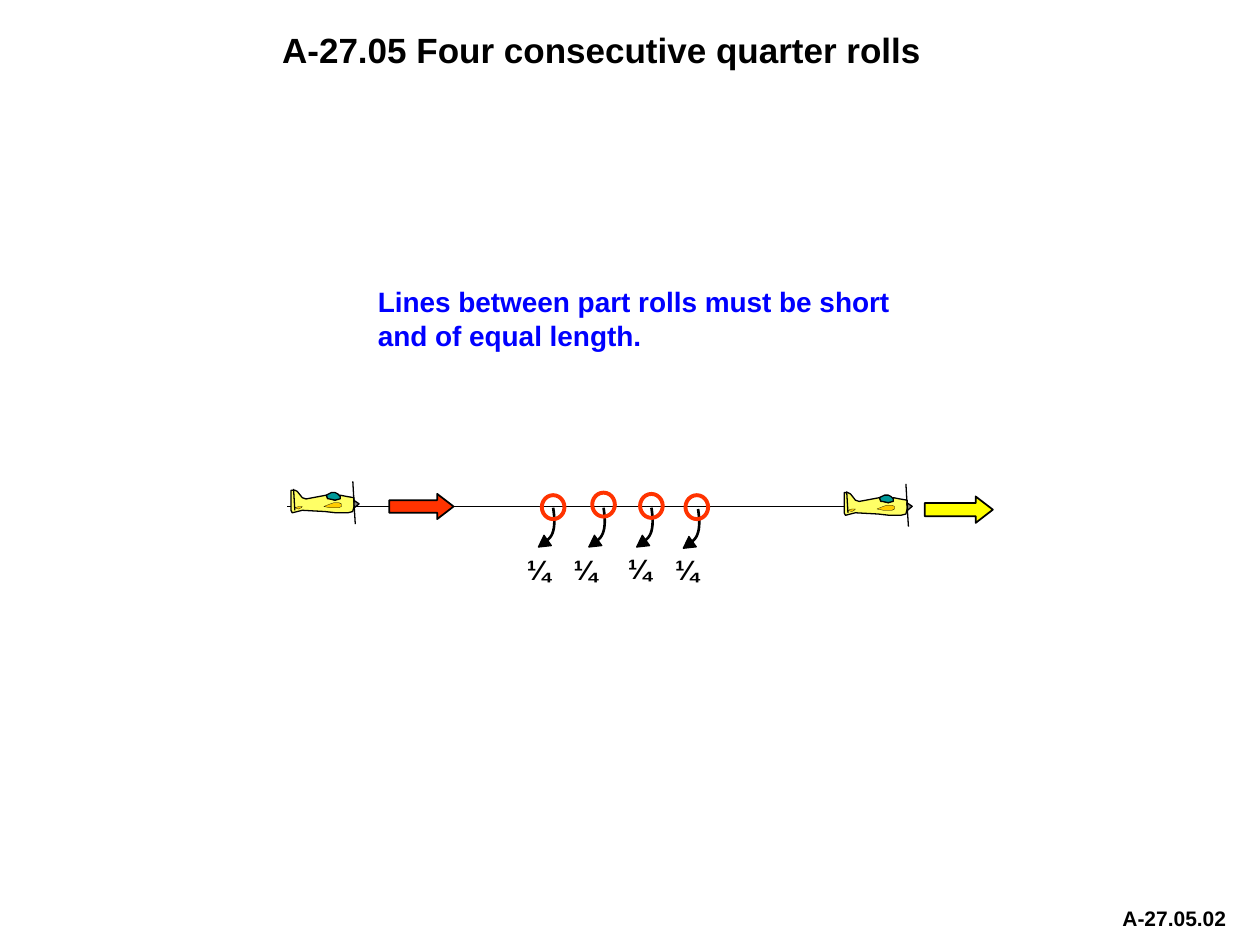
"""Build the slide for figure A-27.05, four consecutive quarter rolls."""
import pptx
import pptx.dml.color
import pptx.enum.shapes
import pptx.enum.text
import pptx.oxml.ns
import pptx.util
from lxml import etree

Inches = pptx.util.Inches
Shape = pptx.enum.shapes.MSO_SHAPE
Align = pptx.enum.text.PP_ALIGN
COLOURS = {
    "black": "000000", "blue": "0000FF", "red": "FF3300", "yellow": "FFFF00",
    "body": "FFFF66", "canopy": "009999", "marking": "FFCC00", "nose": "808080",
}

presentation = pptx.Presentation()
presentation.slide_width = Inches(10)
presentation.slide_height = Inches(7.5)
slide = presentation.slides.add_slide(presentation.slide_layouts[6])


def paint(shape, fill, line, width):
    shape.shadow.inherit = False
    if fill:
        shape.fill.solid()
        shape.fill.fore_color.rgb = pptx.dml.color.RGBColor.from_string(COLOURS[fill])
    else:
        shape.fill.background()
    shape.line.color.rgb = pptx.dml.color.RGBColor.from_string(COLOURS[line])
    shape.line.width = pptx.util.Pt(width)


def add_line(start_x, start_y, end_x, end_y, width):
    connector = slide.shapes.add_connector(
        pptx.enum.shapes.MSO_CONNECTOR.STRAIGHT,
        Inches(start_x), Inches(start_y), Inches(end_x), Inches(end_y))
    connector.line.color.rgb = pptx.dml.color.RGBColor.from_string(COLOURS["black"])
    connector.line.width = pptx.util.Pt(width)
    etree.SubElement(connector._element.spPr, pptx.oxml.ns.qn("a:effectLst"))


add_line(7.02, 4.02, 2.28, 4.02, 1)

plane_parts = [
    ("body", 0.75, [
        (2.7, 3.93), (2.75, 3.94), (2.81, 3.95), (2.81, 4.02), (2.8, 4.06), (2.76, 4.07),
        (2.67, 4.07), (2.58, 4.06), (2.4, 4.05), (2.36, 4.06), (2.32, 4.07), (2.31, 4.05),
        (2.31, 3.89), (2.34, 3.89), (2.36, 3.9), (2.4, 3.95), (2.43, 3.96), (2.59, 3.93),
        (2.6, 3.95), (2.66, 3.97), (2.69, 3.95)]),
    ("canopy", 0.75, [
        (2.59, 3.93), (2.6, 3.96), (2.61, 3.96), (2.66, 3.97), (2.7, 3.96), (2.7, 3.94),
        (2.68, 3.92), (2.66, 3.91), (2.63, 3.91)]),
    ("marking", 0.13, [
        (2.57, 4.02), (2.62, 4), (2.65, 3.99), (2.69, 3.99), (2.71, 4), (2.71, 4.02),
        (2.69, 4.03), (2.62, 4.03)]),
    ("marking", 0.13, [
        (2.34, 4.03), (2.37, 4.04), (2.39, 4.03), (2.4, 4.02), (2.37, 4.02)]),
]
for shift_x, shift_y in [(0, 0), (4.39, 0.02)]:
    add_line(2.82 + shift_x, 4.16 + shift_y, 2.81 + shift_x, 4 + shift_y, 0.75)
    for fill, width, outline in plane_parts:
        points = [(Inches(x + shift_x), Inches(y + shift_y)) for x, y in outline]
        builder = slide.shapes.build_freeform(*points[0])
        builder.add_line_segments(points[1:], close=True)
        paint(builder.convert_to_shape(), fill, "black", width)
    add_line(2.34 + shift_x, 4.05 + shift_y, 2.33 + shift_x, 3.88 + shift_y, 0.75)
    nose = slide.shapes.add_shape(
        Shape.ISOSCELES_TRIANGLE, Inches(2.8 + shift_x), Inches(3.98 + shift_y),
        Inches(0.06), Inches(0.04))
    nose.rotation = 87
    paint(nose, "nose", "black", 0.75)
    add_line(2.81 + shift_x, 3.99 + shift_y, 2.8 + shift_x, 3.82 + shift_y, 0.75)

for left, top, width, height, fill in [
        (3.09, 3.92, 0.51, 0.2, "red"), (7.34, 3.94, 0.54, 0.21, "yellow")]:
    arrow = slide.shapes.add_shape(
        Shape.RIGHT_ARROW, Inches(left), Inches(top), Inches(width), Inches(height))
    arrow.adjustments[1] = 0.65
    paint(arrow, fill, "black", 1)

curve = [(4.39, 4.03), (4.41, 4.16), (4.4, 4.25), (4.34, 4.29)]
steps = 12
for shift_x, shift_y, circle_left, circle_top in [
        (0, 0, 4.3, 3.93), (0.4, 0, 4.7, 3.91), (0.78, 0, 5.08, 3.92), (1.15, 0.01, 5.44, 3.93)]:
    points = []
    for step in range(steps + 1):
        t = step / steps
        weights = [(1 - t) ** 3, 3 * t * (1 - t) ** 2, 3 * t ** 2 * (1 - t), t ** 3]
        x = sum(weight * point[0] for weight, point in zip(weights, curve))
        y = sum(weight * point[1] for weight, point in zip(weights, curve))
        points.append((Inches(x + shift_x), Inches(y + shift_y)))
    builder = slide.shapes.build_freeform(*points[0])
    builder.add_line_segments(points[1:], close=False)
    paint(builder.convert_to_shape(), None, "black", 1.5)
    head = slide.shapes.add_shape(
        Shape.ISOSCELES_TRIANGLE, Inches(4.26 + shift_x), Inches(4.27 + shift_y),
        Inches(0.1), Inches(0.09))
    head.rotation = 234.5
    paint(head, "black", "black", 0.75)
    circle = slide.shapes.add_shape(
        Shape.OVAL, Inches(circle_left), Inches(circle_top), Inches(0.18), Inches(0.19))
    paint(circle, None, "red", 2.25)

for text, left, top, width, height, size, colour, alignment in [
        ("A-27.05 Four consecutive quarter rolls", 2.14, 0.18, 6.79, 0.42, 20, "black", Align.LEFT),
        ("Lines between part rolls must be short\vand of equal length.",
         2.9, 2.21, 4.54, 0.64, 16, "blue", Align.LEFT),
        ("¼", 3.64, 4.34, 1.27, 0.64, 16, "black", Align.CENTER),
        ("¼", 4.01, 4.34, 1.27, 0.64, 16, "black", Align.CENTER),
        ("¼", 4.44, 4.33, 1.27, 0.64, 16, "black", Align.CENTER),
        ("¼", 5.26, 4.34, 1.27, 0.64, 16, "black", Align.LEFT),
        ("A-27.05.02", 8.81, 7.14, 1.03, 0.3, 12, "black", Align.LEFT)]:
    box = slide.shapes.add_textbox(Inches(left), Inches(top), Inches(width), Inches(height))
    box.text_frame.word_wrap = width > 1.2
    box.text_frame.text = text
    paragraph = box.text_frame.paragraphs[0]
    paragraph.alignment = alignment
    for run in paragraph.runs:
        run.font.name = "Arial"
        run.font.size = pptx.util.Pt(size)
        run.font.bold = True
        run.font.color.rgb = pptx.dml.color.RGBColor.from_string(COLOURS[colour])

presentation.save("out.pptx")
